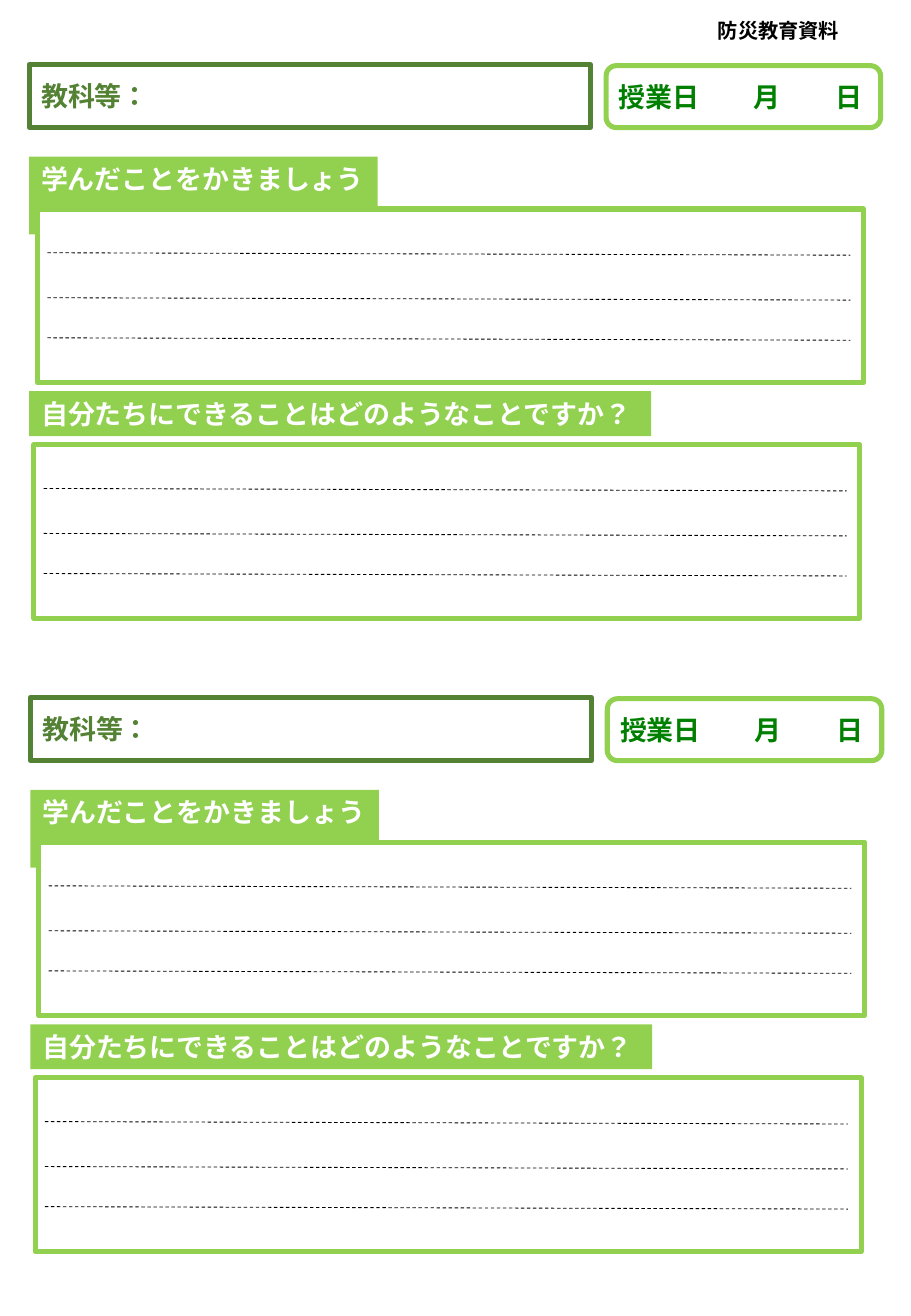
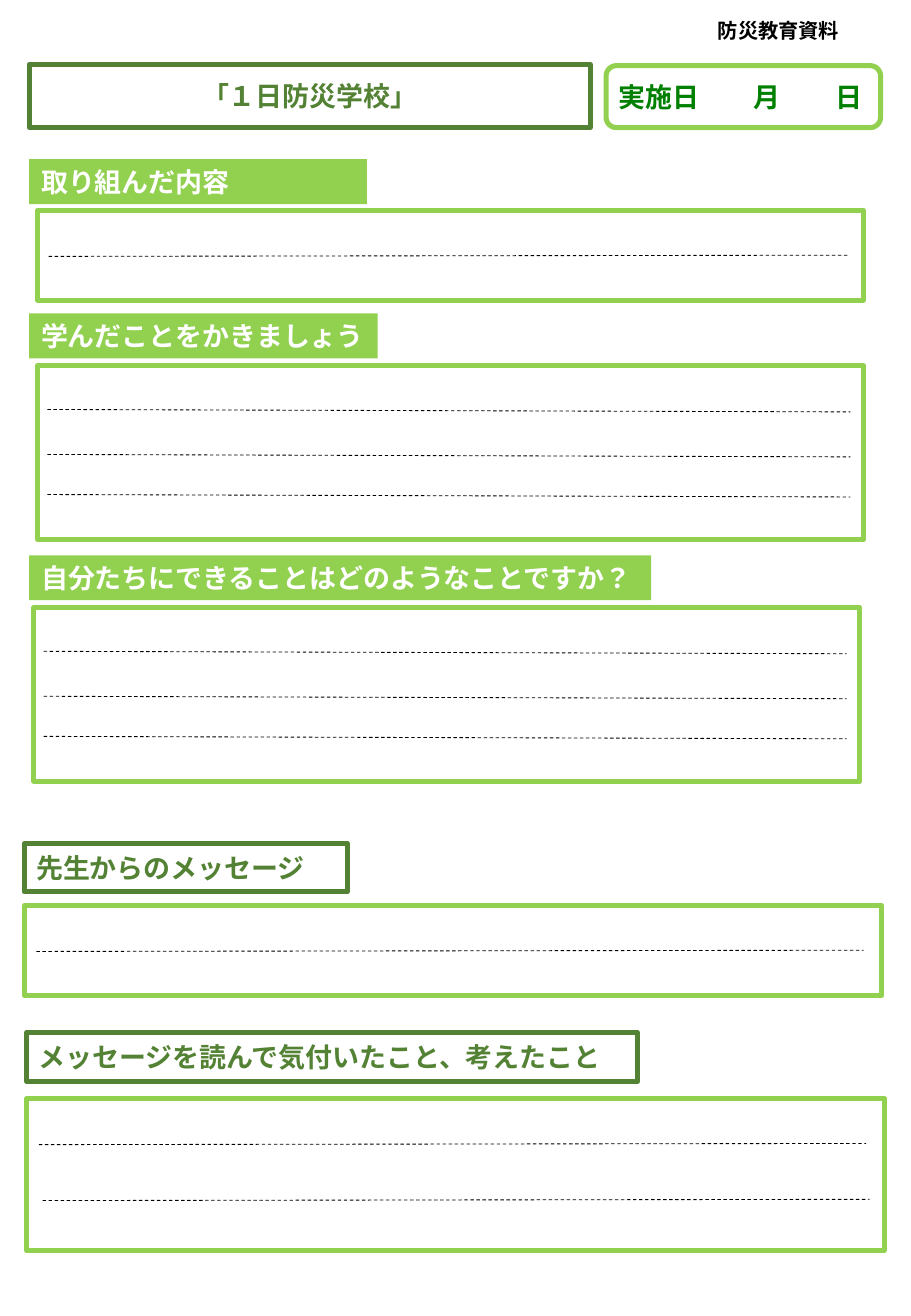
from lxml.etree import SubElement
from pptx import Presentation
from pptx.dml.color import RGBColor
from pptx.enum.dml import MSO_LINE
from pptx.enum.lang import MSO_LANGUAGE_ID
from pptx.enum.shapes import MSO_CONNECTOR, MSO_SHAPE
from pptx.enum.text import MSO_ANCHOR, PP_ALIGN
from pptx.oxml.ns import qn
from pptx.util import Inches, Pt

COLORS = {
    "dark": "548235",
    "light": "92D050",
    "date": "008000",
    "ink": "000000",
    "paper": "FFFFFF",
}
LATIN = "Arial"
GOTHIC = "Noto Sans CJK JP"
LEARNED = "学んだことをかきましょう"
ACTIONS = "自分たちにできることはどのようなことですか？"
THREE = [(0.08, 0.36), (0.08, 0.73), (0.08, 1.06)]
DATE_TABS = (1.11, 1.78)


def color(name):
    return RGBColor.from_string(COLORS[name])


def add_box(slide, x, y, w, h, fill=None, line=None, kind=MSO_SHAPE.RECTANGLE):
    box = slide.shapes.add_shape(kind, Inches(x), Inches(y), Inches(w), Inches(h))
    box.shadow.inherit = False
    if fill:
        box.fill.solid()
        box.fill.fore_color.rgb = color(fill)
    else:
        box.fill.background()
    if line:
        box.line.color.rgb = color(line)
        box.line.width = Pt(3)
    else:
        box.line.fill.background()
    return box


def add_text(box, text, ink, font=GOTHIC, size=16, align=PP_ALIGN.LEFT,
             anchor=MSO_ANCHOR.MIDDLE, insets=(0.1, 0.05, 0, 0.05)):
    frame = box.text_frame
    frame.word_wrap = True
    frame.vertical_anchor = anchor
    (frame.margin_left, frame.margin_top,
     frame.margin_right, frame.margin_bottom) = map(Inches, insets)
    para = frame.paragraphs[0]
    para.alignment = align
    run = para.add_run()
    run.text = text
    run.font.size = Pt(size)
    run.font.bold = True
    run.font.color.rgb = color(ink)
    run.font.name = font
    run.font.language_id = MSO_LANGUAGE_ID.JAPANESE
    east = SubElement(run.font._element, qn("a:ea"))
    east.set("typeface", GOTHIC)
    return para


def add_frame(slide, x, y, w, h, text, align=PP_ALIGN.LEFT):
    box = add_box(slide, x, y, w, h, line="dark")
    add_text(box, text, "dark", LATIN, align=align, insets=(0.1, 0.05, 0.1, 0.05))


def add_label(slide, x, y, w, text, h=0.37):
    box = add_box(slide, x, y, w, h, fill="light")
    add_text(box, text, "paper", anchor=MSO_ANCHOR.TOP)


def add_date(slide, x, y, title):
    box = add_box(slide, x, y, 2.26, 0.51, line="light",
                  kind=MSO_SHAPE.ROUNDED_RECTANGLE)
    para = add_text(box, f"{title}\t月\t日", "date", insets=(0.08, 0, 0, 0))
    tabs = SubElement(para._p.get_or_add_pPr(), qn("a:tabLst"))
    for stop in DATE_TABS:
        tab = SubElement(tabs, qn("a:tab"))
        tab.set("pos", str(Inches(stop)))
        tab.set("algn", "l")


def add_rule(slide, x, y, span, drop):
    rule = slide.shapes.add_connector(
        MSO_CONNECTOR.STRAIGHT, Inches(x), Inches(y),
        Inches(x + span), Inches(y + drop))
    rule.line.color.rgb = color("ink")
    rule.line.width = Pt(0.5)
    rule.line.dash_style = MSO_LINE.DASH
    SubElement(rule._element.spPr, qn("a:effectLst"))


def add_ruled(slide, x, y, w=6.8, h=1.43, rules=THREE, span=6.61, drop=0.02):
    add_box(slide, x, y, w, h, fill="paper", line="light")
    for dx, dy in rules:
        add_rule(slide, x + dx, y + dy, span, drop)


def add_head(slide):
    box = add_box(slide, 5.42, 0.07, 1.98, 0.27, fill="paper")
    add_text(box, "防災教育資料", "ink", size=12, align=PP_ALIGN.CENTER,
             anchor=MSO_ANCHOR.TOP, insets=(0.1, 0.08, 0.1, 0.05))


def add_sheet(slide, x, y):
    add_frame(slide, x, y, 4.62, 0.52, "教科等：")
    add_date(slide, x + 4.75, y + 0.01, "授業日")
    add_label(slide, x, y + 0.76, 2.87, LEARNED, 0.64)
    add_ruled(slide, x + 0.07, y + 1.19)
    add_label(slide, x, y + 2.69, 5.12, ACTIONS)
    add_ruled(slide, x + 0.04, y + 3.13)


def add_day(slide):
    add_frame(slide, 0.24, 0.53, 4.62, 0.52, "「１日防災学校」", PP_ALIGN.CENTER)
    add_date(slide, 4.99, 0.54, "実施日")
    add_label(slide, 0.24, 1.31, 2.78, "取り組んだ内容")
    add_ruled(slide, 0.31, 1.73, h=0.74, rules=[(0.09, 0.38)], span=6.58, drop=-0.01)
    add_label(slide, 0.24, 2.58, 2.87, LEARNED)
    add_ruled(slide, 0.31, 3.01)
    add_label(slide, 0.24, 4.57, 5.12, ACTIONS)
    add_ruled(slide, 0.28, 5)
    add_frame(slide, 0.2, 6.94, 2.66, 0.4, "先生からのメッセージ")
    add_ruled(slide, 0.2, 7.45, 7.06, 0.74, [(0.1, 0.38)], 6.81, -0.01)
    add_frame(slide, 0.22, 8.5, 5.03, 0.4, "メッセージを読んで気付いたこと、考えたこと")
    add_ruled(slide, 0.22, 9.04, 7.06, 1.25, [(0.1, 0.38), (0.13, 0.84)], 6.81, -0.01)


def main():
    deck = Presentation()
    deck.slide_width = Inches(7.5)
    deck.slide_height = Inches(10.83)
    blank = deck.slide_layouts[6]
    lesson = deck.slides.add_slide(blank)
    add_head(lesson)
    for x, y in ((0.24, 0.53), (0.25, 5.74)):
        add_sheet(lesson, x, y)
    day = deck.slides.add_slide(blank)
    add_head(day)
    add_day(day)
    deck.save("out.pptx")


if __name__ == "__main__":
    main()
